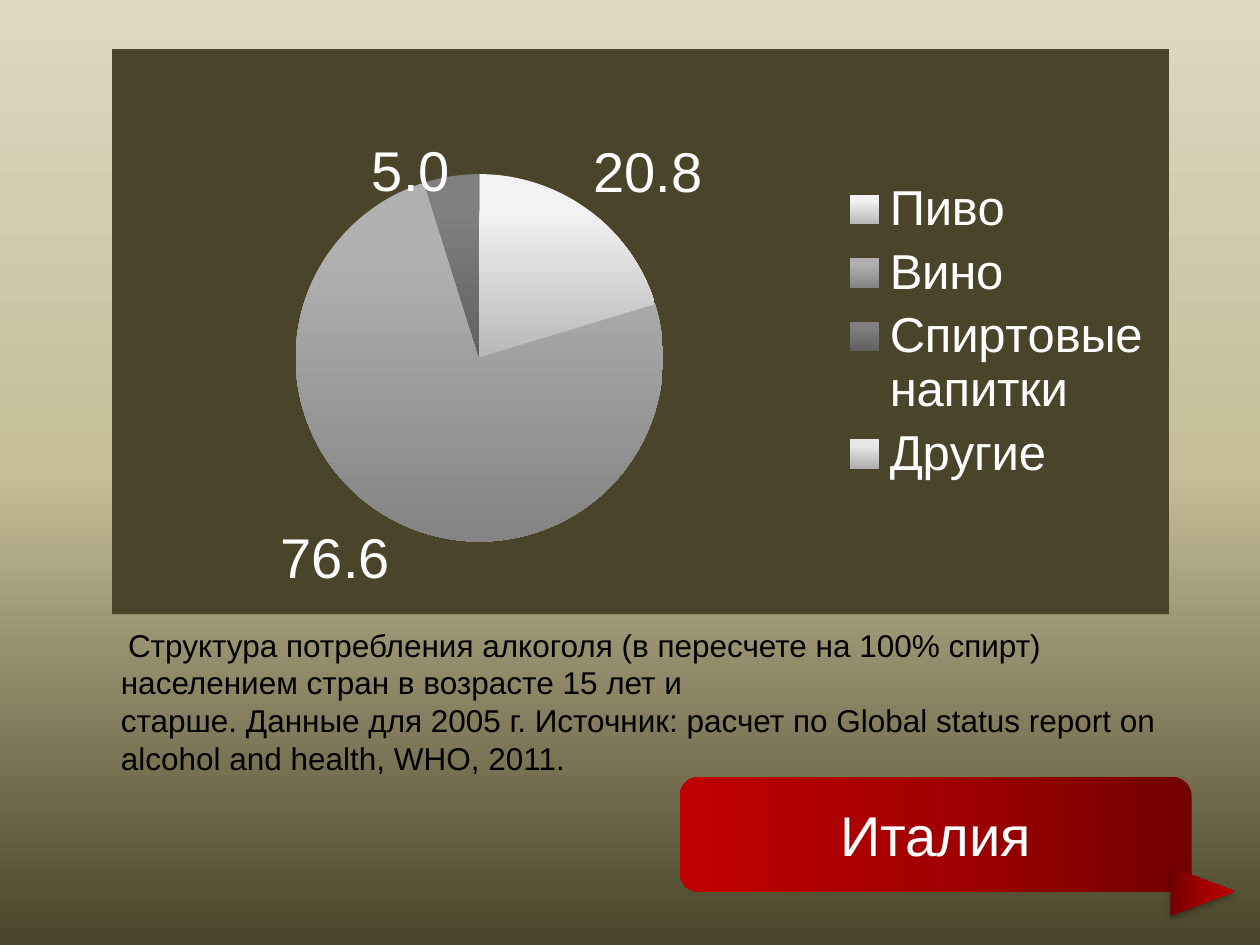
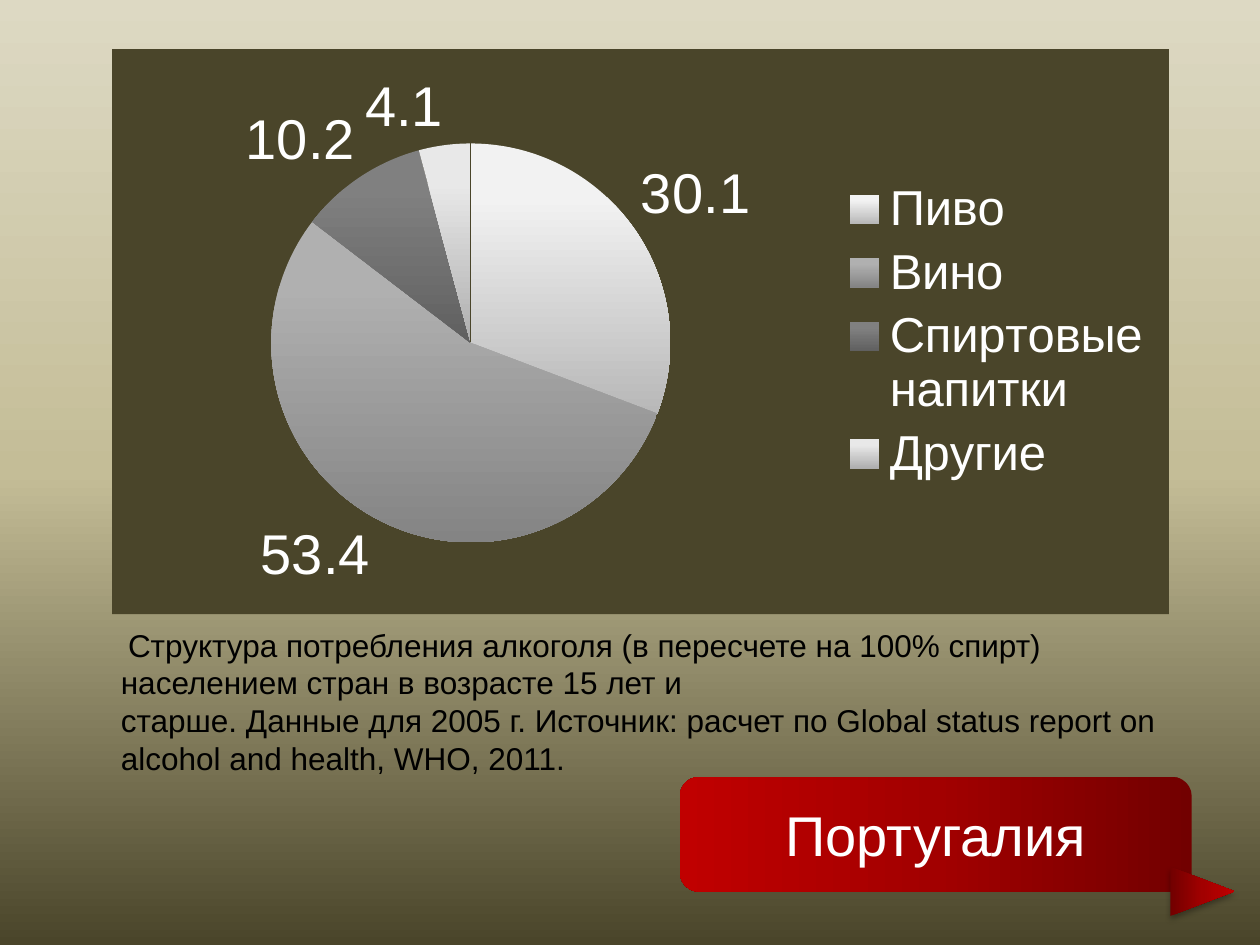
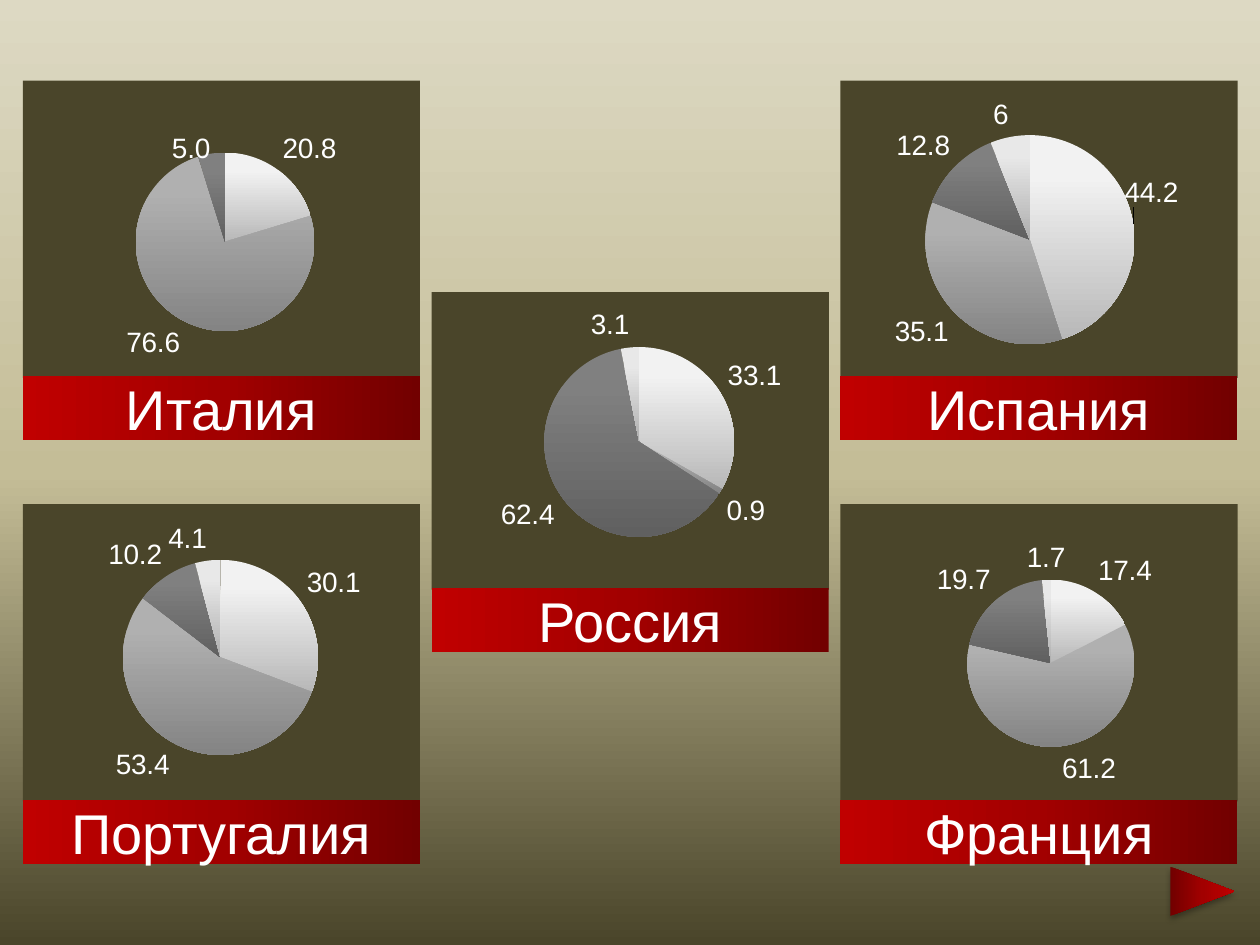
from pptx import Presentation
from pptx.chart.data import CategoryChartData
from pptx.dml.color import RGBColor
from pptx.enum.chart import XL_CHART_TYPE as CT, XL_LABEL_POSITION as LP, XL_LEGEND_POSITION as LG
from pptx.enum.shapes import MSO_SHAPE as SH
from pptx.enum.text import MSO_ANCHOR, PP_ALIGN
from pptx.oxml import parse_xml
from pptx.oxml.ns import nsdecls
from pptx.util import Pt

COLORS = {"panel": "4A452A", "light": "FFFFFF", "dark": "000000"}
BACKGROUND = [(0, "DDD9C3"), (50, "C4BD97"), (100, "4A452A")]
RED = [(0, "720000"), (50, "A20000"), (100, "C00000")]
SLICES = [("F2F2F2", "B8B8B8"), ("B0B0B0", "848484"), ("808080", "606060"), ("E8E8E8", "AEAEAE")]

DRINKS = ["Пиво", "Вино", "Спиртовые напитки", "Другие"]
CAPTION = [
    "Структура потребления алкоголя (в пересчете на 100% спирт) населением стран в возрасте 15 лет и",
    "старше. Данные для 2005 г. Источник: расчет по Global status report on alcohol and health, WHO, 2011.",
]
COUNTRIES = {
    "Италия": {"values": [20.8, 76.6, 5, 0], "format": "0.0;;", "moved": (2, 0, 0.06)},
    "Португалия": {"values": [30.1, 53.4, 10.2, 4.1]},
    "Испания": {"values": [44.2, 35.1, 12.8, 6], "moved": (0, -0.04, -0.05)},
    "Франция": {"values": [17.4, 61.2, 19.7, 1.7]},
    "Россия": {"values": [33.1, 0.9, 62.4, 3.1]},
}
DETAILS = [("Италия", (210, 176.5, 210)), ("Португалия", (205, 168, 228))]
OVERVIEW = [
    ("Италия", 0, 0, (115.6, 92.2, 102)),
    ("Португалия", 0, 2, (113, 87.7, 111.5)),
    ("Испания", 2, 0, (108.3, 91, 119.5)),
    ("Франция", 2, 2, (120.3, 91, 95.5)),
    ("Россия", 1, 1, (118.7, 85.6, 108.5)),
]
DETAIL_CHART = (64, 28, 604, 323)
DETAIL_BAR = (388.5, 444, 292.5, 65.5)
CAPTION_BOX = (62, 354, 608, 94)
PANEL_W, PANEL_H, BAR_H = 227, 170, 36.7
PANEL_LEFT, PANEL_TOP, STEP_X, STEP_Y = 13, 46, 233.6, 121


def style_font(font, size, color, name="Arial"):
    for key, value in {"size": Pt(size), "name": name}.items():
        setattr(font, key, value)
    font.color.rgb = RGBColor.from_string(COLORS[color])


def gradient(fill, owner, stops, angle):
    fill.gradient()
    fill.gradient_angle = angle
    gs_list = owner.xpath(".//a:gsLst")[0]
    for gs in list(gs_list):
        gs_list.remove(gs)
    for pos, color in stops:
        gs_list.append(parse_xml(
            f'<a:gs {nsdecls("a")} pos="{pos * 1000}"><a:srgbClr val="{color}"/></a:gs>'))


def manual_layout(**values):
    items = "".join(f'<c:{key} val="{value}"/>' for key, value in values.items())
    return parse_xml(f'<c:layout {nsdecls("c")}><c:manualLayout>{items}</c:manualLayout></c:layout>')


def add_pie(s, country, box, pie, size, categories, legend=False):
    info = COUNTRIES[country]
    number_format = info.get("format", "General")
    data = CategoryChartData()
    data.categories = categories
    data.add_series("Series 1", info["values"])
    chart = s.shapes.add_chart(CT.PIE, *map(Pt, box), data).chart
    chart.has_title = False
    style_font(chart.font, 18, "light", "Calibri")
    chart.has_legend = legend
    if legend:
        chart.legend.position = LG.RIGHT
        chart.legend.include_in_layout = False
        style_font(chart.legend.font, 28, "light")

    root = chart._chartSpace
    root.xpath("c:chart")[0].addnext(parse_xml(
        f'<c:spPr {nsdecls("c", "a")}><a:solidFill><a:srgbClr val="{COLORS["panel"]}"/></a:solidFill>'
        '<a:ln><a:noFill/></a:ln></c:spPr>'))
    area = root.xpath("c:chart/c:plotArea")[0]
    for old in area.xpath("c:layout"):
        area.remove(old)
    cx, cy, d = pie
    w, h = box[2:]
    area.insert(0, manual_layout(
        layoutTarget="inner", xMode="edge", yMode="edge", x=round((cx - d / 2) / w, 4),
        y=round((cy - d / 2) / h, 4), w=round(d / w, 4), h=round(d / h, 4)))

    plot = chart.plots[0]
    plot.vary_by_categories = True
    series = plot.series[0]
    for i, (top, bottom) in enumerate(SLICES):
        fill = series.points[i].format.fill
        owner = series._element.xpath(f'c:dPt[c:idx/@val="{i}"]')[0]
        gradient(fill, owner, [(0, top), (20, top), (100, bottom)], 270)
    labels = series.data_labels
    for key, value in {"show_value": True, "position": LP.OUTSIDE_END,
                       "number_format": number_format, "number_format_is_linked": False}.items():
        setattr(labels, key, value)
    style_font(labels.font, size, "light")
    if "moved" in info:
        i, dx, dy = info["moved"]
        label = series.points[i].data_label
        label.position = LP.OUTSIDE_END
        style_font(label.font, size, "light")
        idx = series._element.xpath("c:dLbls/c:dLbl/c:idx")[0]
        idx.addnext(parse_xml(
            f'<c:numFmt {nsdecls("c")} formatCode="{number_format}" sourceLinked="0"/>'))
        idx.addnext(manual_layout(x=dx, y=dy))


def add_red_shape(s, kind, box, angle):
    shape = s.shapes.add_shape(kind, *map(Pt, box))
    shape.shadow.inherit = False
    shape.line.fill.background()
    gradient(shape.fill, shape._element.spPr, RED, angle)
    return shape


def add_bar(s, kind, box, text):
    tf = add_red_shape(s, kind, box, 180).text_frame
    tf.vertical_anchor = MSO_ANCHOR.MIDDLE
    p = tf.paragraphs[0]
    p.alignment = PP_ALIGN.CENTER
    r = p.add_run()
    r.text = text
    style_font(r.font, 32, "light")


def add_next_arrow(s):
    arrow = add_red_shape(s, SH.ISOSCELES_TRIANGLE, (673.2, 491, 28, 36.7), 90)
    arrow.rotation = 90
    arrow._element.spPr.xpath("a:effectLst")[0].append(parse_xml(
        f'<a:outerShdw {nsdecls("a")} blurRad="{Pt(3.5)}" dist="{Pt(2.2)}" dir="5400000" rotWithShape="0">'
        f'<a:srgbClr val="{COLORS["dark"]}"><a:alpha val="32000"/></a:srgbClr></a:outerShdw>'))


def add_caption(s):
    tf = s.shapes.add_textbox(*map(Pt, CAPTION_BOX)).text_frame
    tf.word_wrap = True
    for i, text in enumerate(CAPTION):
        p = tf.add_paragraph() if i else tf.paragraphs[0]
        runs = [(text, "Arial")] if i else [(" ", "Calibri"), (text, "Arial")]
        for part, name in runs:
            r = p.add_run()
            r.text = part
            style_font(r.font, 18, "dark", name)


def main():
    prs = Presentation()
    prs.slide_width, prs.slide_height = Pt(720), Pt(540)
    master = prs.slide_master
    gradient(master.background.fill, master.element, BACKGROUND, 270)
    blank = prs.slide_layouts[6]

    for country, pie in DETAILS:
        s = prs.slides.add_slide(blank)
        add_caption(s)
        add_pie(s, country, DETAIL_CHART, pie, 32, DRINKS, legend=True)
        add_bar(s, SH.ROUNDED_RECTANGLE, DETAIL_BAR, country)
        add_next_arrow(s)

    s = prs.slides.add_slide(blank)
    for country, col, row, pie in OVERVIEW:
        x, y = PANEL_LEFT + col * STEP_X, PANEL_TOP + row * STEP_Y
        add_pie(s, country, (x, y, PANEL_W, PANEL_H), pie, 16, ["1", "2", "3", "4"])
        add_bar(s, SH.RECTANGLE, (x, y + PANEL_H - 1, PANEL_W, BAR_H), country)
    add_next_arrow(s)
    prs.save("out.pptx")


if __name__ == "__main__":
    main()
